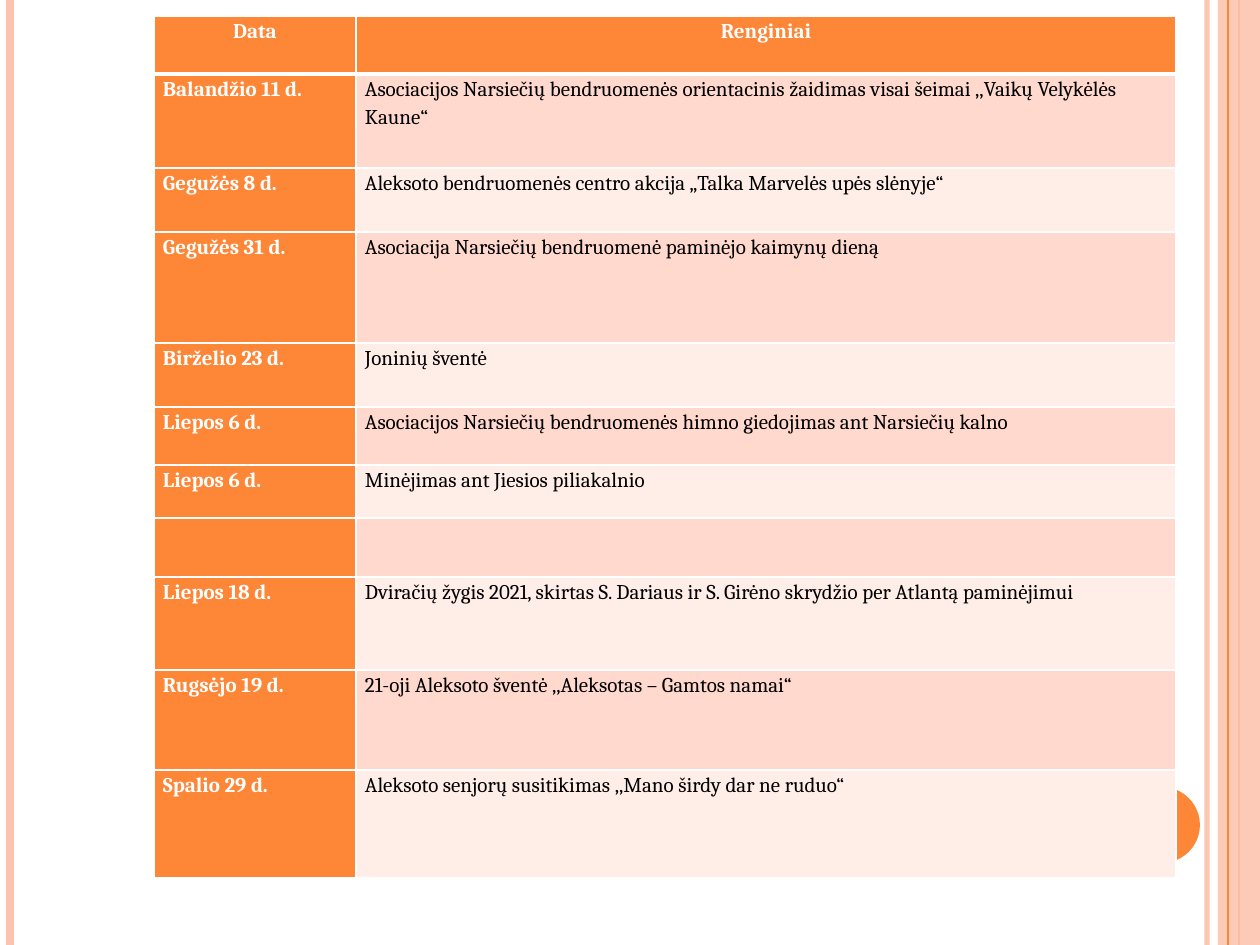
from lxml.etree import SubElement
from pptx import Presentation
from pptx.dml.color import RGBColor
from pptx.enum.shapes import MSO_CONNECTOR, MSO_SHAPE
from pptx.enum.text import PP_ALIGN
from pptx.oxml import parse_xml
from pptx.oxml.ns import nsdecls, qn
from pptx.util import Inches, Pt

ORANGE = RGBColor(0xFE, 0x86, 0x37)
PEACH = RGBColor(0xFE, 0xC3, 0xAE)
BAND_DARK = RGBColor(0xFF, 0xD9, 0xCE)
BAND_LIGHT = RGBColor(0xFF, 0xED, 0xE8)
WHITE = RGBColor(0xFF, 0xFF, 0xFF)
BLACK = RGBColor(0, 0, 0)
FONT = "Cambria"
W, H = 1260, 945

EVENTS = [
    (58, "Data", "Renginiai"),
    (94, "Balandžio 11 d.", "Asociacijos Narsiečių bendruomenės orientacinis žaidimas visai šeimai ,,Vaikų Velykėlės Kaune“"),
    (64, "Gegužės 8 d.", "Aleksoto bendruomenės centro akcija „Talka Marvelės upės slėnyje“"),
    (111, "Gegužės 31 d.", "Asociacija Narsiečių bendruomenė paminėjo kaimynų dieną"),
    (64, "Birželio 23 d.", "Joninių šventė"),
    (58, "Liepos 6 d.", "Asociacijos Narsiečių bendruomenės himno giedojimas ant Narsiečių kalno"),
    (53, "Liepos 6 d.", "Minėjimas ant Jiesios piliakalnio"),
    (59, "", ""),
    (93, "Liepos 18 d.", "Dviračių žygis 2021, skirtas S. Dariaus ir S. Girėno skrydžio per Atlantą paminėjimui"),
    (100, "Rugsėjo 19 d.", "21-oji Aleksoto šventė ,,Aleksotas – Gamtos namai“"),
    (108, "Spalio 29 d.", "Aleksoto senjorų susitikimas ,,Mano širdy dar ne ruduo“"),
]
COLS = (202, 820)
LEFT, TOP = 154, 16


def px(n):
    return round(n * Inches(1) / 126)


def set_alpha(fill, percent):
    color = fill._xPr.find(qn("a:solidFill"))[0]
    SubElement(color, qn("a:alpha")).set("val", str(percent * 1000))


def add_stripe(s, x, color, width, alpha=100):
    line = s.shapes.add_connector(MSO_CONNECTOR.STRAIGHT, px(x), 0, px(x), px(H))
    line.line.color.rgb = color
    line.line.width = Pt(width)
    if alpha < 100:
        set_alpha(line.line.fill, alpha)
    SubElement(line._element.spPr, qn("a:effectLst"))


def add_block(s, kind, x, y, w, h, color):
    sp = s.shapes.add_shape(kind, px(x), px(y), px(w), px(h))
    sp.shadow.inherit = False
    sp.fill.solid()
    sp.fill.fore_color.rgb = color
    sp.line.fill.background()
    return sp


def set_borders(cell, widths):
    tcPr = cell._tc.get_or_add_tcPr()
    for i, (side, width) in enumerate(widths.items()):
        tcPr.insert(i, parse_xml(
            f'<a:ln{side} {nsdecls("a")} w="{Pt(width)}"><a:solidFill>'
            f'<a:srgbClr val="{WHITE}"/></a:solidFill></a:ln{side}>'))


def fill_cell(cell, text, row, col):
    strong = row == 0 or col == 0
    cell.fill.solid()
    cell.fill.fore_color.rgb = ORANGE if strong else BAND_DARK if row % 2 else BAND_LIGHT
    cell.margin_left = cell.margin_right = px(9)
    cell.margin_top = cell.margin_bottom = 0
    set_borders(cell, {"L": 1, "R": 1, "T": 3 if row == 1 else 1, "B": 3 if row == 0 else 1})
    p = cell.text_frame.paragraphs[0]
    p.text = text
    p.line_spacing = 1.15
    p.alignment = PP_ALIGN.CENTER if row == 0 else PP_ALIGN.LEFT
    p.font.name = FONT
    p.font.size = Pt(12)
    p.font.bold = strong
    p.font.color.rgb = WHITE if strong else BLACK


def main():
    prs = Presentation()
    prs.slide_width, prs.slide_height = px(W), px(H)
    s = prs.slides.add_slide(prs.slide_layouts[6])

    add_stripe(s, 1207, PEACH, 3, 93)
    add_stripe(s, 10, PEACH, 4.5)
    add_stripe(s, 1239, ORANGE, 1.5)
    band = add_block(s, MSO_SHAPE.RECTANGLE, 1218, 0, 42, H, PEACH)
    set_alpha(band.fill, 87)
    add_stripe(s, 1228, ORANGE, 0.75)
    add_block(s, MSO_SHAPE.OVAL, 1124, 787, 76, 76, ORANGE)

    heights = [event[0] for event in EVENTS]
    table = s.shapes.add_table(len(EVENTS), len(COLS), px(LEFT), px(TOP),
                               px(sum(COLS)), px(sum(heights))).table
    for col, width in enumerate(COLS):
        table.columns[col].width = px(width)
    for row, (height, *texts) in enumerate(EVENTS):
        table.rows[row].height = px(height)
        for col, text in enumerate(texts):
            fill_cell(table.cell(row, col), text, row, col)

    prs.save("out.pptx")


if __name__ == "__main__":
    main()
